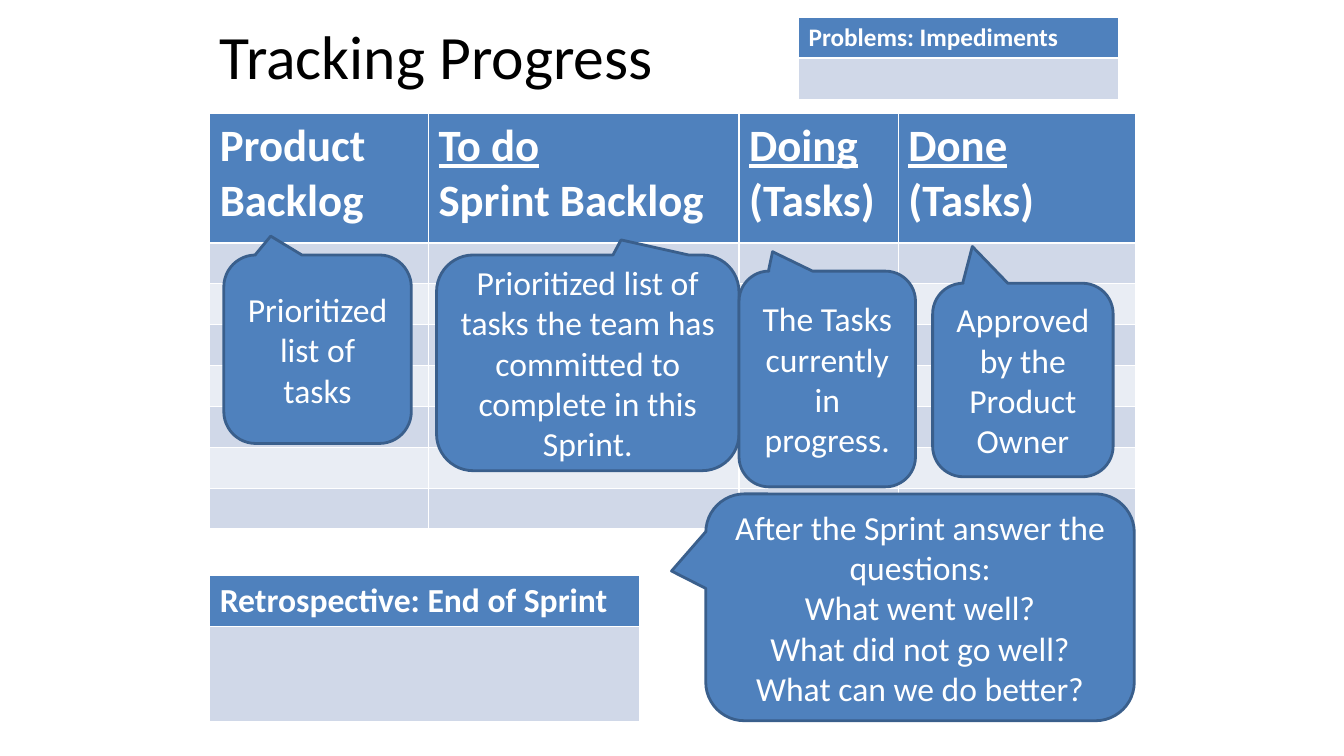
import pptx
import pptx.dml.color
import pptx.enum.shapes
import pptx.enum.text
import pptx.util

Inches = pptx.util.Inches
Pt = pptx.util.Pt
PP_ALIGN = pptx.enum.text.PP_ALIGN
MIDDLE = pptx.enum.text.MSO_ANCHOR.MIDDLE

FONT = "Calibri"
COLORS = {
    "accent": "4F81BD",
    "outline": "3A5F8C",
    "band_dark": "D0D8E8",
    "band_light": "E9EDF4",
    "white": "FFFFFF",
    "black": "000000",
}

TITLE = "Tracking Progress"
TITLE_BOX = (1.58, -0.08, 5.5, 1.25)

# A heading is a list of paragraphs; a paragraph is a list of (text, underlined).
BOARDS = [
    {
        "corner": (2.08, 1.13),
        "columns": [2.17, 3.08, 1.58, 2.35],
        "rows": [1.28] + [0.4] * 7,
        "size": 32,
        "headings": [
            [[("Product", False)], [("Backlog", False)]],
            [[("To do", True)], [("Sprint Backlog", False)]],
            [[("Doing", True)], [("(Tasks)", False)]],
            [[("Done", True), (" (Tasks)", False)]],
        ],
    },
    {
        "corner": (2.08, 5.71),
        "columns": [4.26],
        "rows": [0.5, 0.94],
        "size": 24,
        "headings": [[[("Retrospective: End of Sprint", False)]]],
    },
    {
        "corner": (7.92, 0.17),
        "columns": [3.17],
        "rows": [0.4, 0.41],
        "size": 18,
        "headings": [[[("Problems: Impediments", False)]]],
    },
]

# Box, pointer tip relative to the box, lines of text
CALLOUTS = [
    ((2.22, 2.53, 1.86, 1.87), (-0.25, -0.6), ["Prioritized list of tasks"]),
    ((4.33, 2.53, 3, 2.14), (0.11, -0.57),
     ["Prioritized list of tasks the team has committed to complete in this Sprint."]),
    ((7.33, 2.69, 1.75, 2.14), (-0.31, -0.59), ["The Tasks currently in progress."]),
    ((7, 4.9, 4.25, 2.25), (-0.58, -0.16),
     ["After the Sprint answer the questions:", "What went well?",
      "What did not go well?", "What can we do better?"]),
    ((9.25, 2.81, 1.79, 1.92), (-0.28, -0.69), ["Approved by the Product Owner"]),
]
CALLOUT_SIZE = 24
CORNER_ROUNDING = 0.17


def rgb(name):
    return pptx.dml.color.RGBColor.from_string(COLORS[name])


def paint(target, color):
    target.fill.solid()
    target.fill.fore_color.rgb = rgb(color)


def write(frame, paragraphs, size, color, bold=False, align=None):
    for index, pieces in enumerate(paragraphs):
        paragraph = frame.add_paragraph() if index else frame.paragraphs[0]
        paragraph.alignment = align
        for text, underlined in pieces:
            run = paragraph.add_run()
            run.text = text
            run.font.name = FONT
            run.font.size = Pt(size)
            run.font.bold = bold
            run.font.underline = underlined
            run.font.color.rgb = rgb(color)


def add_title(slide):
    title = slide.shapes.title
    title.left, title.top, title.width, title.height = map(Inches, TITLE_BOX)
    title.text_frame.vertical_anchor = MIDDLE
    write(title.text_frame, [[(TITLE, False)]], 44, "black", align=PP_ALIGN.CENTER)


def add_board(slide, board):
    columns, rows = board["columns"], board["rows"]
    extent = (*board["corner"], sum(columns), sum(rows))
    table = slide.shapes.add_table(len(rows), len(columns), *map(Inches, extent)).table
    for column, width in zip(table.columns, columns):
        column.width = Inches(width)
    for index, (row, height) in enumerate(zip(table.rows, rows)):
        row.height = Inches(height)
        band = "band_dark" if index % 2 else "band_light"
        for cell in row.cells:
            paint(cell, band if index else "accent")
    for cell, heading in zip(table.rows[0].cells, board["headings"]):
        write(cell.text_frame, heading, board["size"], "white", bold=True)


def add_callout(slide, box, tip, lines):
    callout = slide.shapes.add_shape(
        pptx.enum.shapes.MSO_SHAPE.ROUNDED_RECTANGULAR_CALLOUT, *map(Inches, box))
    for index, value in enumerate((*tip, CORNER_ROUNDING)):
        callout.adjustments[index] = value
    callout.shadow.inherit = False
    paint(callout, "accent")
    callout.line.color.rgb = rgb("outline")
    callout.line.width = Pt(2)
    callout.text_frame.word_wrap = True
    callout.text_frame.vertical_anchor = MIDDLE
    write(callout.text_frame, [[(line, False)] for line in lines],
          CALLOUT_SIZE, "white", align=PP_ALIGN.CENTER)


def main():
    deck = pptx.Presentation()
    deck.slide_width, deck.slide_height = Inches(13.33), Inches(7.5)
    slide = deck.slides.add_slide(deck.slide_layouts[5])
    add_title(slide)
    for board in BOARDS:
        add_board(slide, board)
    for box, tip, lines in CALLOUTS:
        add_callout(slide, box, tip, lines)
    deck.save("out.pptx")


if __name__ == "__main__":
    main()
